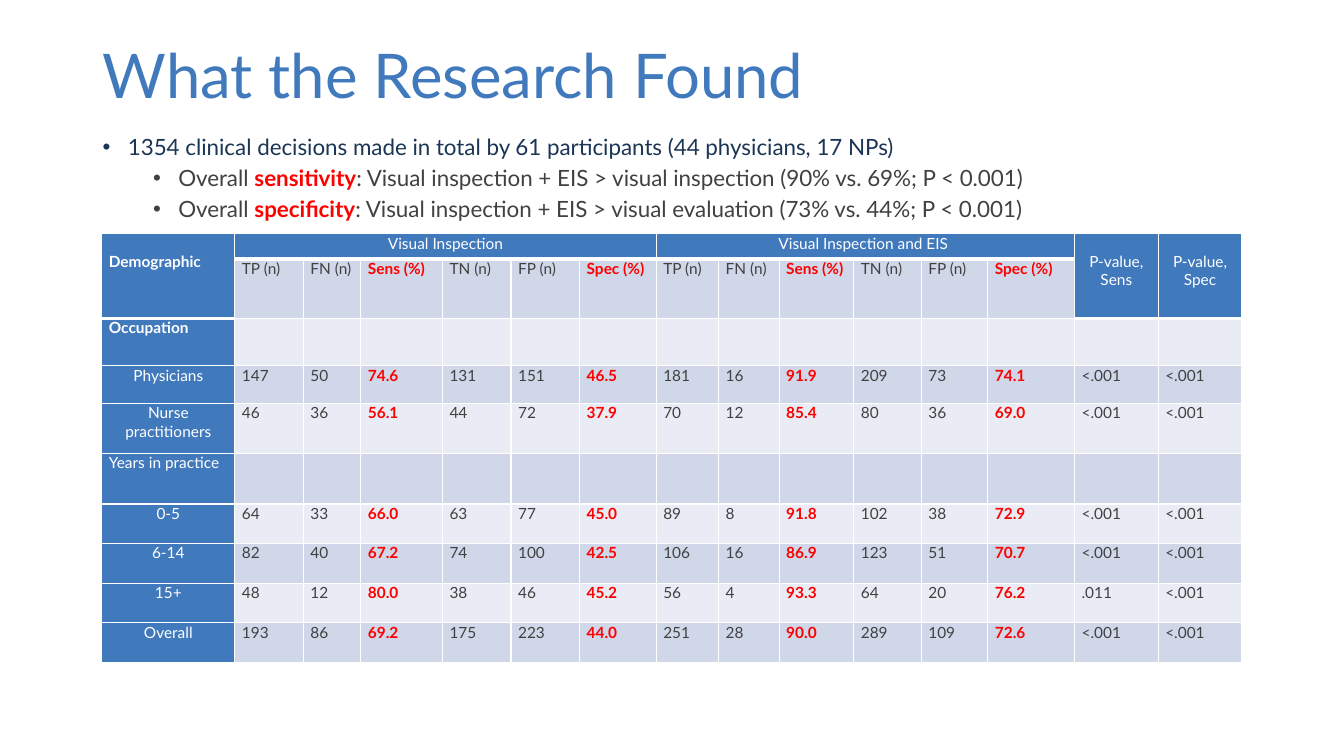
from lxml import etree
from pptx import Presentation
from pptx.dml.color import RGBColor
from pptx.enum.text import MSO_ANCHOR, PP_ALIGN
from pptx.oxml.ns import qn
from pptx.util import Inches, Pt

LEFT, CENTER, JUSTIFY = PP_ALIGN.LEFT, PP_ALIGN.CENTER, PP_ALIGN.JUSTIFY
TOP = MSO_ANCHOR.TOP

FONT = "Lato"
BLUE, NAVY, GRAY, RED, WHITE = "4179BD", "1B3555", "414141", "FF0000", "FFFFFF"
DARK_BAND, LIGHT_BAND = "CFD7E8", "E9ECF4"

BULLETS = [
    (0, [("1354 clinical decisions made in total by 61 participants "
          "(44 physicians, 17 NPs)", NAVY, False)]),
    (1, [("Overall ", GRAY, False), ("sensitivity", RED, True),
         (": Visual inspection + EIS > visual inspection (90% vs. 69%; P < 0.001)", GRAY, False)]),
    (1, [("Overall ", GRAY, False), ("specificity", RED, True),
         (": Visual inspection + EIS > visual evaluation (73% vs. 44%; P < 0.001)", GRAY, False)]),
]

COLUMN_WIDTHS = [1.32, 0.68, 0.57, 0.81, 0.68, 0.68, 0.76, 0.62,
                 0.6, 0.74, 0.67, 0.66, 0.86, 0.83, 0.83]
ROW_HEIGHTS = [0.25, 0.59, 0.47, 0.37, 0.5, 0.5, 0.39, 0.4, 0.39, 0.39]
HEADER_LINE = 0.18
# first row, first column, last row, last column, lines, alignment, bold, top margin
HEADERS = [
    (0, 0, 1, 0, ["Demographic"], LEFT, True, HEADER_LINE),
    (0, 1, 0, 6, ["Visual Inspection"], CENTER, False, 0),
    (0, 7, 0, 12, ["Visual Inspection and EIS "], CENTER, False, 0),
    (0, 13, 1, 13, ["P-value,", "Sens"], CENTER, False, HEADER_LINE),
    (0, 14, 1, 14, ["P-value, Spec"], CENTER, False, HEADER_LINE),
]
MEASURES = ["TP (n)", "FN (n)", "Sens (%)", "TN (n)", "FP (n)", "Spec (%)"]
RATE_COLUMNS = {3, 6, 9, 12}
GROUPS = {"Occupation": (JUSTIFY, True), "Years in practice": (LEFT, False)}
RESULTS = [
    ("Occupation", ""),
    ("Physicians", "147 50 74.6 131 151 46.5 181 16 91.9 209 73 74.1 <.001 <.001"),
    ("Nurse practitioners", "46 36 56.1 44 72 37.9 70 12 85.4 80 36 69.0 <.001 <.001"),
    ("Years in practice", ""),
    ("0-5", "64 33 66.0 63 77 45.0 89 8 91.8 102 38 72.9 <.001 <.001"),
    ("6-14", "82 40 67.2 74 100 42.5 106 16 86.9 123 51 70.7 <.001 <.001"),
    ("15+", "48 12 80.0 38 46 45.2 56 4 93.3 64 20 76.2 .011 <.001"),
    ("Overall", "193 86 69.2 175 223 44.0 251 28 90.0 289 109 72.6 <.001 <.001"),
]


def color(hex_value):
    return RGBColor.from_string(hex_value)


def add_run(paragraph, text, size, hex_value, bold=False):
    run = paragraph.add_run()
    run.text = text
    run.font.name = FONT
    run.font.size = Pt(size)
    run.font.bold = bold
    run.font.color.rgb = color(hex_value)


def add_text_frame(slide, left, top, width, height):
    box = slide.shapes.add_textbox(Inches(left), Inches(top), Inches(width), Inches(height))
    box.text_frame.word_wrap = True
    box.text_frame.vertical_anchor = TOP
    return box.text_frame


def add_bullet(paragraph, level):
    properties = paragraph._p.get_or_add_pPr()
    properties.set("marL", str(Inches(0.25 + 0.5 * level)))
    properties.set("indent", str(Inches(-0.25)))
    etree.SubElement(properties, qn("a:buFont")).set("typeface", "Arial")
    etree.SubElement(properties, qn("a:buChar")).set("char", "•")


def add_title(slide, left, top, width, height):
    paragraph = add_text_frame(slide, left, top, width, height).paragraphs[0]
    paragraph.line_spacing = 0.9
    add_run(paragraph, "What the Research Found", 44, BLUE)


def add_findings(slide, left, top, width, height):
    frame = add_text_frame(slide, left, top, width, height)
    for index, (level, runs) in enumerate(BULLETS):
        paragraph = frame.add_paragraph() if index else frame.paragraphs[0]
        paragraph.level = level
        add_bullet(paragraph, level)
        paragraph.line_spacing = 0.9
        paragraph.space_before = Pt(5 if index else 0)
        for text, hex_value, bold in runs:
            add_run(paragraph, text, 16, hex_value, bold)


def style_cell(cell, fill, bottom_width=1):
    """Set the margins, white borders and fill of a table cell."""
    cell.margin_left = cell.margin_right = Inches(0.07)
    cell.margin_top = cell.margin_bottom = 0
    properties = cell._tc.get_or_add_tcPr()
    for side, width in (("L", 1), ("R", 1), ("T", 1), ("B", bottom_width)):
        line = etree.SubElement(properties, qn(f"a:ln{side}"), w=str(Pt(width)))
        line_fill = etree.SubElement(line, qn("a:solidFill"))
        etree.SubElement(line_fill, qn("a:srgbClr"), val=WHITE)
    cell.fill.solid()
    cell.fill.fore_color.rgb = color(fill)


def write_cell(cell, lines, hex_value, bold=False, alignment=LEFT):
    frame = cell.text_frame
    for index, text in enumerate(lines):
        paragraph = frame.add_paragraph() if index else frame.paragraphs[0]
        paragraph.alignment = alignment
        add_run(paragraph, text, 11, hex_value, bold)


def add_results_table(slide, left, top, width, height):
    table = slide.shapes.add_table(
        len(ROW_HEIGHTS), len(COLUMN_WIDTHS),
        Inches(left), Inches(top), Inches(width), Inches(height)).table
    for column, column_width in zip(table.columns, COLUMN_WIDTHS):
        column.width = Inches(column_width)
    for row, row_height in zip(table.rows, ROW_HEIGHTS):
        row.height = Inches(row_height)

    # Fills and borders
    for row_index, row in enumerate(table.rows):
        band = DARK_BAND if row_index % 2 else LIGHT_BAND
        for column_index, cell in enumerate(row.cells):
            header = row_index == 0 or (row_index == 1 and column_index > 12)
            style_cell(cell, BLUE if header or column_index == 0 else band, 3 if header else 1)

    # Merged headers
    for first_row, first, last_row, last, lines, alignment, bold, margin in HEADERS:
        cell = table.cell(first_row, first)
        cell.merge(table.cell(last_row, last))
        cell.margin_top = Inches(margin)
        write_cell(cell, lines, WHITE, bold, alignment)

    # Measure names and results
    rows = [("", MEASURES * 2)] + [(label, values.split()) for label, values in RESULTS]
    for row_index, (label, values) in enumerate(rows, start=1):
        if label:
            alignment, bold = GROUPS.get(label, (CENTER, False))
            write_cell(table.cell(row_index, 0), [label], WHITE, bold, alignment)
        for column_index, value in enumerate(values, start=1):
            rate = column_index in RATE_COLUMNS
            write_cell(table.cell(row_index, column_index), [value], RED if rate else GRAY, rate)


def main():
    presentation = Presentation()
    presentation.slide_width = Inches(13.33)
    presentation.slide_height = Inches(7.5)
    slide = presentation.slides.add_slide(presentation.slide_layouts[6])
    add_title(slide, 0.92, 0.4, 11.5, 0.9)
    add_findings(slide, 0.92, 1.3, 11.5, 1)
    add_results_table(slide, 1.01, 2.32, sum(COLUMN_WIDTHS), sum(ROW_HEIGHTS))
    presentation.save("out.pptx")


if __name__ == "__main__":
    main()
